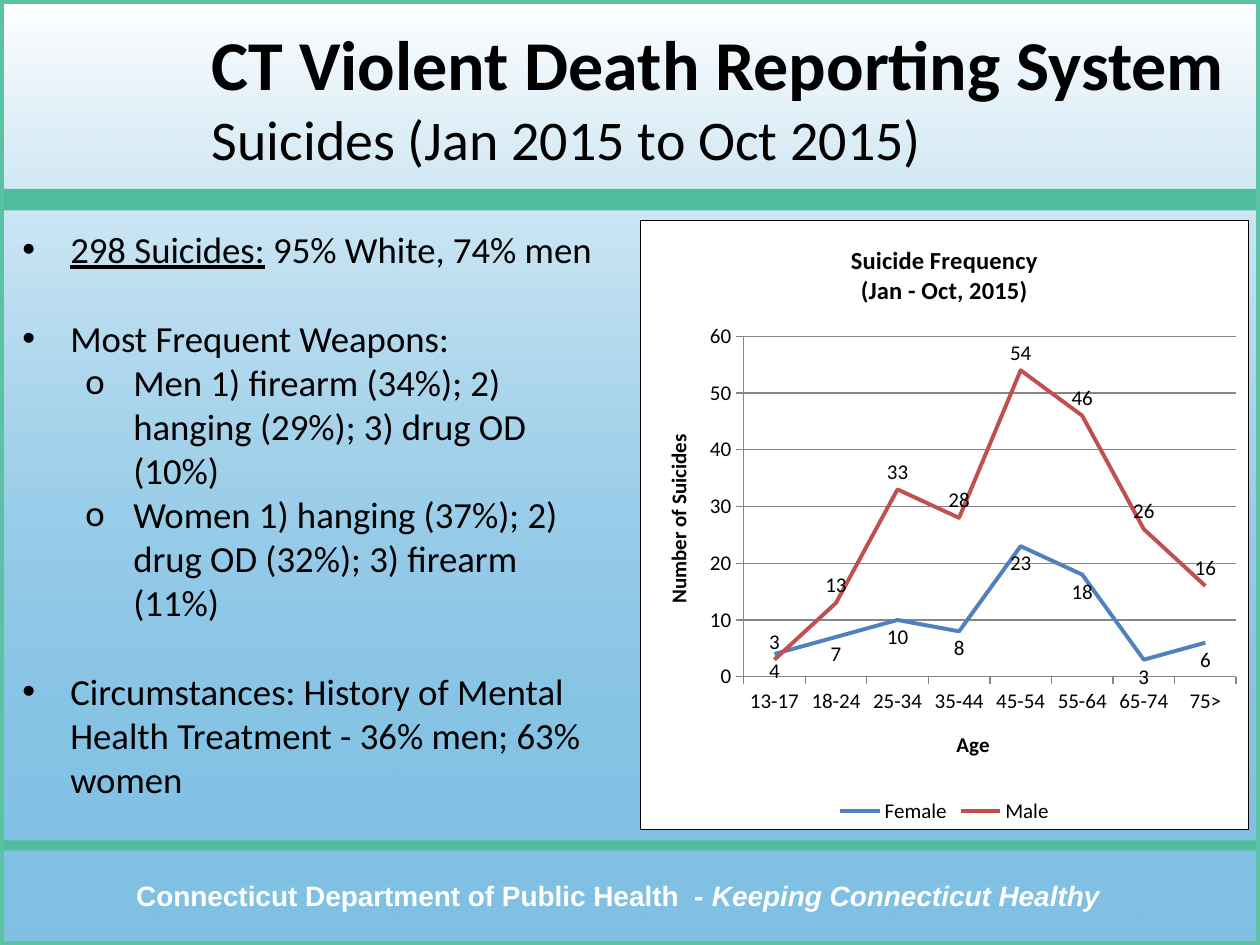
from lxml.etree import SubElement
from pptx import Presentation
from pptx.chart.data import CategoryChartData
from pptx.dml.color import RGBColor
from pptx.enum.chart import XL_CHART_TYPE, XL_LABEL_POSITION, XL_LEGEND_POSITION, XL_TICK_MARK
from pptx.enum.shapes import MSO_SHAPE
from pptx.enum.text import MSO_ANCHOR, PP_ALIGN
from pptx.oxml import parse_xml
from pptx.oxml.ns import nsdecls, qn
from pptx.util import Inches, Pt

BLACK = RGBColor(0x00, 0x00, 0x00)
WHITE = RGBColor(0xFF, 0xFF, 0xFF)
GRAY = RGBColor(0x86, 0x86, 0x86)
SKY = RGBColor(0x00, 0x82, 0xC8)
GREEN = RGBColor(0x4D, 0xBD, 0x9C)
MINT = RGBColor(0x5B, 0xC2, 0xA4)
BLUE = RGBColor(0x4F, 0x81, 0xBD)
RED = RGBColor(0xC0, 0x50, 0x4D)


def add_rect(top, height):
    rect = slide.shapes.add_shape(
        MSO_SHAPE.RECTANGLE, 0, Inches(top), Inches(10), Inches(height))
    rect.shadow.inherit = False
    rect.line.fill.background()
    return rect


def style(font, size, color=BLACK, bold=False, name="Calibri"):
    font.name = name
    font.size = Pt(size)
    font.bold = bold
    font.color.rgb = color


prs = Presentation()
prs.slide_width = Inches(10)
prs.slide_height = Inches(7.5)
slide = prs.slides.add_slide(prs.slide_layouts[5])

back = add_rect(0, 7.5)
back.fill.gradient()
back.fill.gradient_angle = 90
for stop, color, place in zip(back.fill.gradient_stops, (SKY, WHITE), (0, 1)):
    stop.color.rgb = color
    stop.position = place
first = next(back.element.iter(qn("a:srgbClr")))
SubElement(first, qn("a:alpha"), val="50000")

for top, height in ((6.67, 0.08), (1.5, 0.17)):
    band = add_rect(top, height)
    band.fill.solid()
    band.fill.fore_color.rgb = GREEN

frame = add_rect(0, 7.5)
frame.fill.background()
frame.line.color.rgb = MINT
frame.line.width = Pt(4.5)

footer = slide.shapes.add_textbox(Inches(0.49), Inches(6.92), Inches(8.83), Inches(0.37))
footer.text_frame.word_wrap = True
para = footer.text_frame.paragraphs[0]
para.alignment = PP_ALIGN.CENTER
for text, slant in (("Connecticut Department of Public Health  - ", False),
                    ("Keeping Connecticut Healthy", True)):
    run = para.add_run()
    run.text = text
    style(run.font, 16, WHITE, True, "Arial")
    run.font.italic = slant

title = slide.shapes.title
slide.shapes.element.append(title.element)
title.left, title.top = Inches(1.58), Inches(0.03)
title.width, title.height = Inches(8.42), Inches(1.47)
title.text_frame.vertical_anchor = MSO_ANCHOR.MIDDLE
para = title.text_frame.paragraphs[0]
para.alignment = PP_ALIGN.LEFT
for text, size, bold in (("CT Violent Death Reporting System ", 40, True),
                         ("Suicides (Jan 2015 to Oct 2015)", 32, False)):
    run = para.add_run()
    run.text = text
    style(run.font, size, BLACK, bold)

data = CategoryChartData(number_format="0")
data.categories = ["13-17", "18-24", "25-34", "35-44", "45-54", "55-64", "65-74", "75>"]
data.add_series("Female", (4, 7, 10, 8, 23, 18, 3, 6))
data.add_series("Male", (3, 13, 33, 28, 54, 46, 26, 16))
chart = slide.shapes.add_chart(
    XL_CHART_TYPE.LINE, Inches(5.08), Inches(1.75), Inches(4.83), Inches(4.83), data).chart
style(chart.font, 12)
chart.has_title = True
chart.chart_title.include_in_layout = False
chart.chart_title.text_frame.text = "Suicide Frequency\n(Jan - Oct, 2015)"
for para in chart.chart_title.text_frame.paragraphs:
    style(para.runs[0].font, 14, BLACK, True)
chart.has_legend = True
chart.legend.position = XL_LEGEND_POSITION.BOTTOM
chart.legend.include_in_layout = False

for axis, text in ((chart.category_axis, "Age"), (chart.value_axis, "Number of Suicides")):
    axis.axis_title.text_frame.text = text
    style(axis.axis_title.text_frame.paragraphs[0].runs[0].font, 12, BLACK, True)
    axis.major_tick_mark = XL_TICK_MARK.OUTSIDE
    axis.format.line.color.rgb = GRAY
grid = chart.value_axis
grid.minimum_scale, grid.maximum_scale, grid.major_unit = 0, 60, 10
grid.major_gridlines.format.line.color.rgb = GRAY

looks = ((BLUE, XL_LABEL_POSITION.BELOW), (RED, XL_LABEL_POSITION.ABOVE))
for line, (color, place) in zip(chart.plots[0].series, looks):
    line.smooth = False
    line.format.line.color.rgb = color
    line.format.line.width = Pt(2.25)
    labels = line.data_labels
    labels.show_value = True
    labels.position = place
    style(labels.font, 12)

plot = chart.element.find(".//" + qn("c:plotArea"))
for old in plot.findall(qn("c:layout")):
    plot.remove(old)
plot.insert(0, parse_xml(
    f'<c:layout {nsdecls("c")}><c:manualLayout><c:layoutTarget val="inner"/>'
    '<c:xMode val="edge"/><c:yMode val="edge"/><c:x val="0.17"/><c:y val="0.19"/>'
    '<c:w val="0.81"/><c:h val="0.56"/></c:manualLayout></c:layout>'))
chart.element.find(qn("c:chart")).addnext(parse_xml(
    f'<c:spPr {nsdecls("c", "a")}><a:solidFill><a:srgbClr val="{WHITE}"/></a:solidFill>'
    f'<a:ln w="3175"><a:solidFill><a:srgbClr val="{BLACK}"/></a:solidFill></a:ln></c:spPr>'))

points = (
    (0, 0, "298 Suicides:", " 95% White, 74% men"),
    (0, 25.5, "", "Most Frequent Weapons:"),
    (1, 0, "", "Men 1) firearm (34%); 2) hanging (29%); 3) drug OD (10%)"),
    (1, 0, "", "Women 1) hanging (37%); 2) drug OD (32%); 3) firearm (11%)"),
    (0, 25.5, "", "Circumstances: History of Mental Health Treatment - 36% men; 63% women"),
)
body = slide.shapes.add_textbox(Inches(0.08), Inches(1.75), Inches(4.83), Inches(4.7)).text_frame
body.word_wrap = True
for i, (level, gap, lead, text) in enumerate(points):
    para = body.add_paragraph() if i else body.paragraphs[0]
    para.level = level
    para.space_before = Pt(gap)
    props = para._p.get_or_add_pPr()
    props.set("marL", str(Inches(0.38 + 0.5 * level)))
    props.set("indent", str(Inches(-0.38)))
    SubElement(props, qn("a:buFont"), typeface="Calibri" if level else "Arial")
    SubElement(props, qn("a:buChar"), char="o" if level else "•")
    for part in filter(None, (lead, text)):
        run = para.add_run()
        run.text = part
        style(run.font, 21)
        run.font.underline = part == lead

prs.save("out.pptx")
